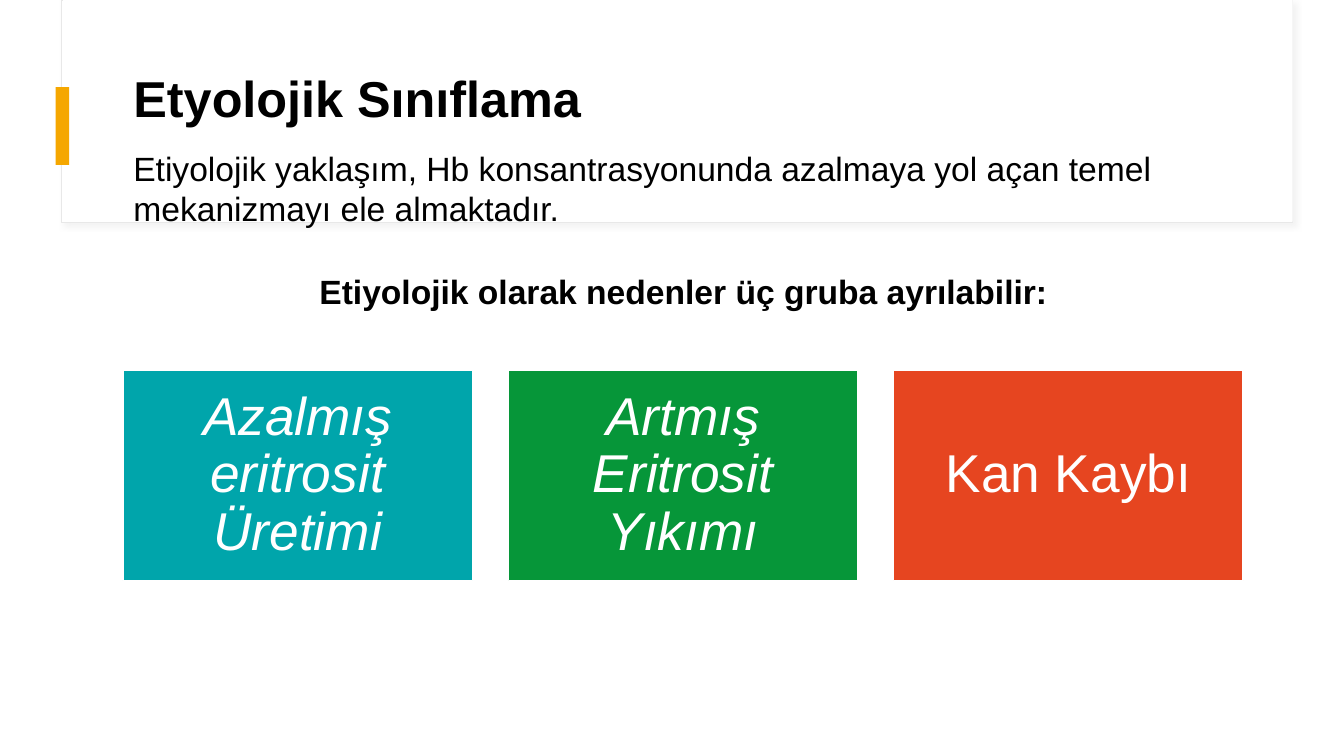
from dataclasses import dataclass
from lxml.etree import SubElement
from pptx import Presentation
from pptx.dml.color import RGBColor as Color
from pptx.enum.shapes import MSO_SHAPE as Shape
from pptx.enum.text import MSO_ANCHOR as Anchor, MSO_AUTO_SIZE as Fit, PP_ALIGN as Align
from pptx.oxml.ns import qn
from pptx.util import Pt

SCALE = 9525  # EMU in one px


@dataclass(frozen=True)
class Theme:
    font: str = "Arial"
    ink: str = "000000"
    paper: str = "FFFFFF"
    edge: str = "E8E8E8"
    shade: str = "D8D8D8"
    mark: str = "F5A700"
    teal: str = "00A5AB"
    green: str = "069639"
    red: str = "E64520"
    head: int = 36
    body: int = 24
    tile: int = 38


LOOK = Theme()


def px(*sizes):
    return [round(size * SCALE) for size in sizes]


def add_rect(slide, box, fill, line=None, width=1):
    rect = slide.shapes.add_shape(Shape.RECTANGLE, *px(*box))
    rect.shadow.inherit = False
    rect.fill.solid()
    rect.fill.fore_color.rgb = Color.from_string(fill)
    if line:
        rect.line.color.rgb = Color.from_string(line)
        rect.line.width = Pt(width)
    else:
        rect.line.fill.background()
    return rect


def add_shade(shape):
    """Give the shape a soft shadow down and to the right."""
    effects = shape._element.spPr.find(qn("a:effectLst"))
    outer = SubElement(effects, qn("a:outerShdw"), blurRad=str(Pt(4)),
                       dist=str(Pt(3)), dir="2700000", algn="tl", rotWithShape="0")
    tint = SubElement(outer, qn("a:srgbClr"), val=LOOK.shade)
    SubElement(tint, qn("a:alpha"), val="30000")


def write(shape, text, size, color=LOOK.ink, bold=False, italic=False,
          align=Align.LEFT, anchor=Anchor.TOP, pad=(10, 5), space=1.0):
    frame = shape.text_frame
    frame.word_wrap = True
    frame.auto_size = Fit.NONE
    frame.vertical_anchor = anchor
    side, top = px(*pad)
    frame.margin_left = frame.margin_right = side
    frame.margin_top = frame.margin_bottom = top
    para = frame.paragraphs[0]
    para.alignment = align
    para.line_spacing = space
    run = para.add_run()
    run.text = text
    font = run.font
    font.name, font.size = LOOK.font, Pt(size)
    font.bold, font.italic = bold, italic
    font.color.rgb = Color.from_string(color)


def add_head(slide, box, title, intro):
    """Draw the title card with its side mark, title and lead text."""
    left, top, width, height = box
    add_shade(add_rect(slide, box, LOOK.paper, LOOK.edge, 0.75))
    add_rect(slide, (left + 1, top, width - 1, height - 1), LOOK.paper)
    add_rect(slide, (left - 6, top + 83, 13, 74), LOOK.mark)

    head = slide.shapes.title
    head.left, head.top, head.width, head.height = px(left + 58, top + 58, 1068, 124)
    slide.shapes._spTree.append(head._element)
    write(head, title, LOOK.head, bold=True, pad=(10, 12), space=0.9)

    lead = slide.shapes.add_textbox(*px(left + 58, top + 136, 1068, 87))
    write(lead, intro, LOOK.body)


def add_note(slide, box, text):
    note = slide.shapes.add_textbox(*px(*box))
    write(note, text, LOOK.body, bold=True, align=Align.CENTER)


def add_tiles(slide, box, tiles, gap=34):
    left, top, width, height = box
    wide = (width - gap * (len(tiles) - 1)) / len(tiles)
    for i, (text, fill, italic) in enumerate(tiles):
        spot = (left + i * (wide + gap), top, wide, height)
        tile = add_rect(slide, spot, fill, LOOK.paper)
        write(tile, text, LOOK.tile, LOOK.paper, italic=italic, align=Align.CENTER,
              anchor=Anchor.MIDDLE, pad=(15, 15), space=0.9)


def main():
    deck = Presentation()
    deck.slide_width, deck.slide_height = px(1280, 720)
    slide = deck.slides.add_slide(deck.slide_layouts[5])
    add_head(slide, (59, 0, 1172, 212), "Etyolojik Sınıflama",
             "Etiyolojik yaklaşım, Hb konsantrasyonunda azalmaya yol açan temel "
             "mekanizmayı ele almaktadır.")
    add_tiles(slide, (117, 353, 1067, 200), [
        ("Azalmış eritrosit Üretimi", LOOK.teal, True),
        ("Artmış Eritrosit Yıkımı", LOOK.green, True),
        ("Kan Kaybı", LOOK.red, False),
    ])
    add_note(slide, (197, 253, 908, 48),
             "Etiyolojik olarak nedenler üç gruba ayrılabilir:")
    deck.save("out.pptx")


if __name__ == "__main__":
    main()
